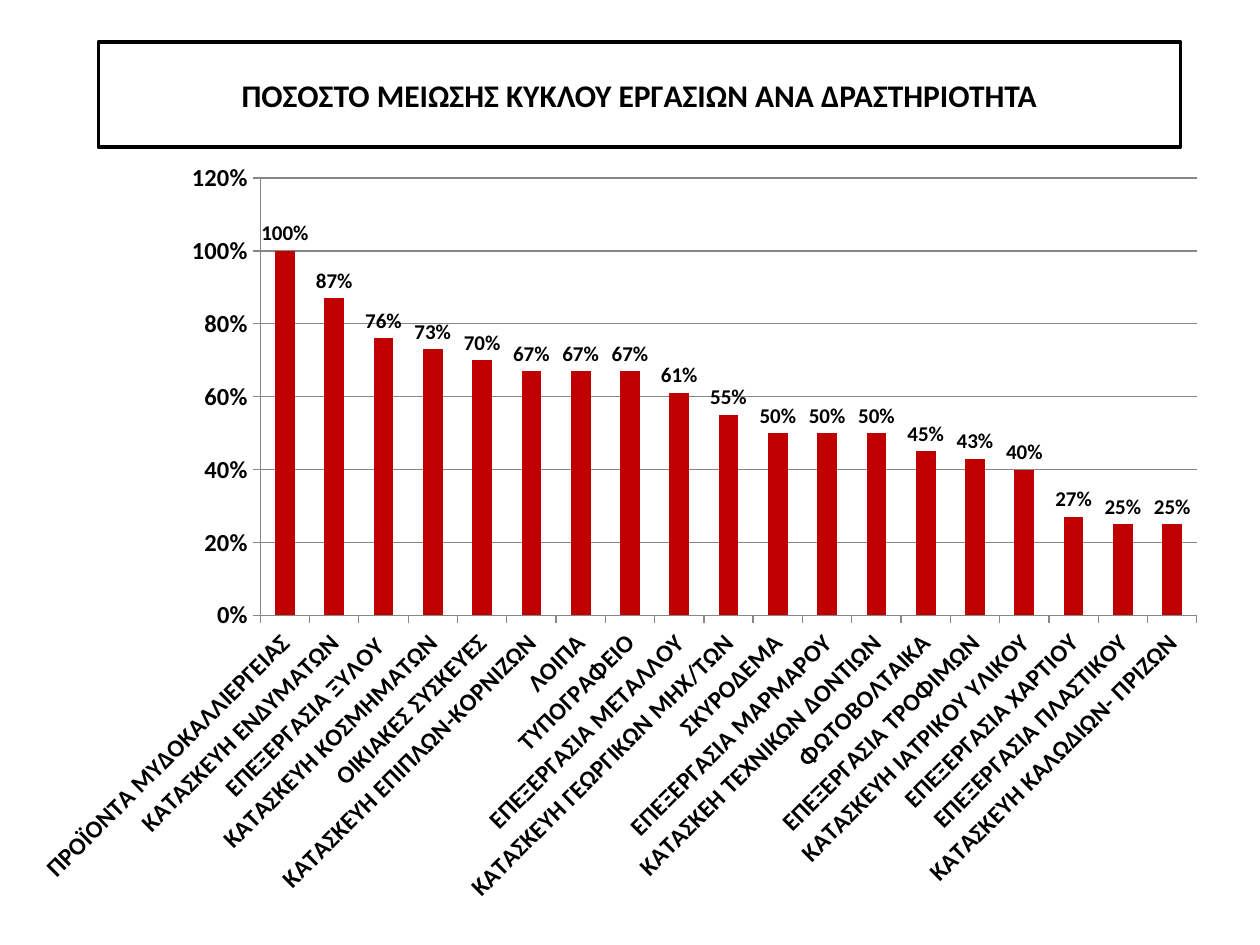
from lxml import etree
from pptx import Presentation
from pptx import util as u
from pptx.chart.data import CategoryChartData
from pptx.dml.color import RGBColor
from pptx.enum import chart as ch
from pptx.enum import text
from pptx.oxml.ns import qn

COLORS = {"ink": "000000", "paper": "FFFFFF", "bar": "C00000", "grid": "868686"}

TITLE = "ΠΟΣΟΣΤΟ ΜΕΙΩΣΗΣ ΚΥΚΛΟΥ ΕΡΓΑΣΙΩΝ ΑΝΑ ΔΡΑΣΤΗΡΙΟΤΗΤΑ"
DROPS = [
    ("ΠΡΟΪΟΝΤΑ ΜΥΔΟΚΑΛΛΙΕΡΓΕΙΑΣ", 1),
    ("ΚΑΤΑΣΚΕΥΗ ΕΝΔΥΜΑΤΩΝ", 0.87),
    ("ΕΠΕΞΕΡΓΑΣΙΑ ΞΥΛΟΥ ", 0.76),
    ("ΚΑΤΑΣΚΕΥΗ ΚΟΣΜΗΜΑΤΩΝ", 0.73),
    ("ΟΙΚΙΑΚΕΣ ΣΥΣΚΕΥΕΣ", 0.7),
    ("ΚΑΤΑΣΚΕΥΗ ΕΠΙΠΛΩΝ-ΚΟΡΝΙΖΩΝ", 0.67),
    ("ΛΟΙΠΑ", 0.67),
    ("ΤΥΠΟΓΡΑΦΕΙΟ", 0.67),
    ("ΕΠΕΞΕΡΓΑΣΙΑ ΜΕΤΑΛΛΟΥ", 0.61),
    ("ΚΑΤΑΣΚΕΥΗ ΓΕΩΡΓΙΚΩΝ ΜΗΧ/ΤΩΝ", 0.55),
    ("ΣΚΥΡΟΔΕΜΑ", 0.5),
    ("ΕΠΕΞΕΡΓΑΣΙΑ ΜΑΡΜΑΡΟΥ", 0.5),
    ("ΚΑΤΑΣΚΕΗ ΤΕΧΝΙΚΩΝ ΔΟΝΤΙΩΝ", 0.5),
    ("ΦΩΤΟΒΟΛΤΑΙΚΑ", 0.45),
    ("ΕΠΕΞΕΡΓΑΣΙΑ ΤΡΟΦΙΜΩΝ", 0.43),
    ("ΚΑΤΑΣΚΕΥΗ ΙΑΤΡΙΚΟΥ ΥΛΙΚΟΥ", 0.4),
    ("ΕΠΕΞΕΡΓΑΣΙΑ ΧΑΡΤΙΟΥ", 0.27),
    ("ΕΠΕΞΕΡΓΑΣΙΑ ΠΛΑΣΤΙΚΟΥ", 0.25),
    (" ΚΑΤΑΣΚΕΥΗ ΚΑΛΩΔΙΩΝ- ΠΡΙΖΩΝ", 0.25),
]


def rgb(name):
    return RGBColor.from_string(COLORS[name])


def pin(chart, **box):
    """Fix the inner plot area; x, y, w, h are fractions of the chart."""
    area = chart._chartSpace.chart.plotArea
    for old in area.findall(qn("c:layout")):
        area.remove(old)
    layout = etree.Element(qn("c:layout"))
    area.insert(0, layout)
    manual = etree.SubElement(layout, qn("c:manualLayout"))
    parts = {"layoutTarget": "inner", "xMode": "edge", "yMode": "edge", **box}
    for tag, val in parts.items():
        etree.SubElement(manual, qn("c:" + tag)).set("val", str(val))


class Deck:
    font = "Calibri"

    def __init__(self, prs):
        self.slide = prs.slides.add_slide(prs.slide_layouts[5])

    def style(self, font, size, bold=True):
        font.name = self.font
        font.size = u.Pt(size)
        font.bold = bold
        font.color.rgb = rgb("ink")

    def title(self, words, *box):
        shape = self.slide.shapes.title
        shape.left, shape.top, shape.width, shape.height = map(u.Inches, box)
        shape.fill.solid()
        shape.fill.fore_color.rgb = rgb("paper")
        shape.line.color.rgb = rgb("ink")
        shape.line.width = u.Pt(2)
        frame = shape.text_frame
        frame.word_wrap = True
        frame.auto_size = text.MSO_AUTO_SIZE.SHAPE_TO_FIT_TEXT
        para = frame.paragraphs[0]
        para.alignment = text.PP_ALIGN.CENTER
        run = para.add_run()
        run.text = words
        self.style(run.font, 18)

    def axis(self, axis):
        axis.major_tick_mark = ch.XL_TICK_MARK.OUTSIDE
        axis.minor_tick_mark = ch.XL_TICK_MARK.NONE
        self.style(axis.tick_labels.font, 14)
        self.line(axis.format.line)

    def line(self, line):
        line.color.rgb = rgb("grid")
        line.width = u.Pt(0.75)

    def bars(self, rows, *box):
        data = CategoryChartData(number_format="0%")
        names, vals = zip(*rows)
        data.categories = names
        data.add_series("Series 1", vals)
        chart = self.slide.shapes.add_chart(
            ch.XL_CHART_TYPE.COLUMN_CLUSTERED, *map(u.Inches, box), data
        ).chart
        chart.has_legend = chart.has_title = False
        self.style(chart.font, 10, False)
        pin(chart, x=0.2, y=0.04, w=0.78, h=0.57)

        cats, scale = chart.category_axis, chart.value_axis
        for axis in (cats, scale):
            self.axis(axis)
        cats._element.txPr.bodyPr.set("rot", "-2700000")
        scale.minimum_scale, scale.maximum_scale = 0, 1.2
        scale.major_unit = 0.2
        scale.tick_labels.number_format = "0%"
        scale.tick_labels.number_format_is_linked = False
        scale.has_major_gridlines = True
        self.line(scale.major_gridlines.format.line)

        plot = chart.plots[0]
        plot.vary_by_categories = False
        plot.gap_width = 150
        fill = plot.series[0].format.fill
        fill.solid()
        fill.fore_color.rgb = rgb("bar")
        plot.has_data_labels = True
        labels = plot.data_labels
        labels.show_value = True
        labels.number_format = "0%"
        labels.number_format_is_linked = False
        labels.position = ch.XL_LABEL_POSITION.OUTSIDE_END
        self.style(labels.font, 12)


def main():
    prs = Presentation()
    prs.slide_width, prs.slide_height = u.Inches(10), u.Inches(7.5)
    deck = Deck(prs)
    deck.bars(DROPS, 0.16, 1.17, 9.53, 6.09)
    deck.title(TITLE, 0.78, 0.55, 8.59, 0.4)
    prs.save("out.pptx")


if __name__ == "__main__":
    main()
